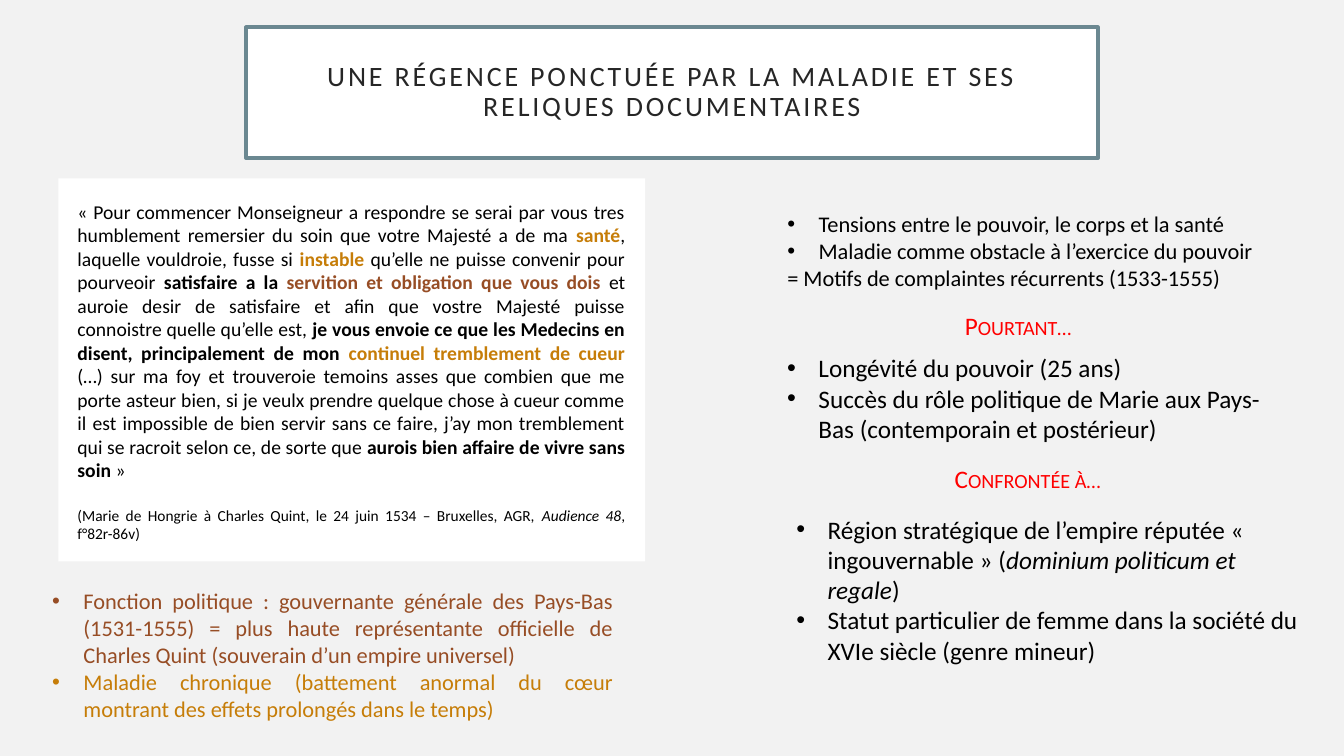
from dataclasses import dataclass

from lxml import etree
from pptx import Presentation
from pptx import util as u
from pptx.dml.color import RGBColor
from pptx.enum import shapes, text
from pptx.oxml.ns import qn

PX = 9144  # EMU per px, 100 px to the inch
HANG = 31  # bullet indent in px


@dataclass(frozen=True)
class Theme:
    font: str = "Calibri"
    back: str = "F2F2F2"
    white: str = "FFFFFF"
    frame: str = "6B8891"
    title: str = "262626"
    black: str = "000000"
    gold: str = "C67D08"
    rust: str = "974D25"
    red: str = "FF0000"
    note: int = 11
    quote: int = 14
    small: int = 16
    large: int = 18
    head: int = 20


T = Theme()
LEFT, CENTER, FULL = text.PP_ALIGN.LEFT, text.PP_ALIGN.CENTER, text.PP_ALIGN.JUSTIFY


@dataclass(frozen=True)
class Box:
    left: int
    top: int
    width: int
    height: int

    def emu(self) -> list[int]:
        return [n * PX for n in (self.left, self.top, self.width, self.height)]


@dataclass(frozen=True)
class Run:
    text: str
    ink: str = T.black
    bold: bool = False
    italic: bool = False


@dataclass(frozen=True)
class Para:
    runs: list[Run]
    size: int
    align: text.PP_ALIGN = LEFT
    bullet: bool = False
    before: int = 0
    lines: float = 1.0


@dataclass(frozen=True)
class Block:
    box: Box
    paras: list[Para]
    caps: bool = False


def assign(obj: object, values: dict) -> None:
    for name, value in values.items():
        setattr(obj, name, value)


def add_para(frame, para: Para, first: bool, extra: dict[str, str]) -> None:
    """Add a paragraph; extra holds raw run attributes such as cap or spc."""
    p = frame.paragraphs[0] if first else frame.add_paragraph()
    assign(p, dict(alignment=para.align, line_spacing=para.lines,
                   space_before=u.Pt(para.before)))
    if para.bullet:
        props = p._p.get_or_add_pPr()
        props.set("marL", str(HANG * PX))
        props.set("indent", str(-HANG * PX))
        etree.SubElement(props, qn("a:buFont")).set("typeface", "Arial")
        etree.SubElement(props, qn("a:buChar")).set("char", "•")
    for item in para.runs:
        run = p.add_run()
        run.text = item.text
        assign(run.font, dict(name=T.font, size=u.Pt(para.size),
                              bold=item.bold, italic=item.italic))
        run.font.color.rgb = RGBColor.from_string(item.ink)
        for key, value in extra.items():
            run._r.get_or_add_rPr().set(key, value)


def add_block(slide, block: Block) -> None:
    frame = slide.shapes.add_textbox(*block.box.emu()).text_frame
    assign(frame, dict(word_wrap=True, auto_size=text.MSO_AUTO_SIZE.SHAPE_TO_FIT_TEXT))
    extra = {"cap": "small"} if block.caps else {}
    for i, para in enumerate(block.paras):
        add_para(frame, para, i == 0, extra)


def add_panel(slide, box: Box):
    panel = slide.shapes.add_shape(shapes.MSO_SHAPE.RECTANGLE, *box.emu())
    panel.shadow.inherit = False
    panel.fill.solid()
    panel.fill.fore_color.rgb = RGBColor.from_string(T.white)
    panel.line.fill.background()
    return panel


def add_title(slide, box: Box, words: str) -> None:
    panel = add_panel(slide, box)
    panel.line.color.rgb = RGBColor.from_string(T.frame)
    panel.line.width = u.Pt(2.5)
    frame = panel.text_frame
    sides = ("left", "top", "right", "bottom")
    assign(frame, {f"margin_{side}": 20 * PX for side in sides})
    assign(frame, dict(word_wrap=True, vertical_anchor=text.MSO_ANCHOR.MIDDLE))
    para = Para([Run(words, T.title)], T.head, CENTER, lines=0.9)
    add_para(frame, para, True, {"spc": "200"})


def point(words: str, size: int, ink: str = T.black, align: text.PP_ALIGN = LEFT) -> Para:
    return Para([Run(words, ink)], size, align, bullet=True)


def label(box: Box, words: str) -> Block:
    return Block(box, [Para([Run(words, T.red)], T.large)], caps=True)


TITLE = "UNE RÉGENCE PONCTUÉE PAR LA MALADIE ET SES RELIQUES DOCUMENTAIRES"

QUOTE = [
    Run("« Pour commencer Monseigneur a respondre se serai par vous tres humblement "
        "remersier du soin que votre Majesté a de ma "),
    Run("santé", T.gold, bold=True),
    Run(", laquelle vouldroie, fusse si "),
    Run("instable", T.gold, bold=True),
    Run(" qu’elle ne puisse convenir pour pourveoir "),
    Run("satisfaire a la ", bold=True),
    Run("servition et obligation que vous dois ", T.rust, bold=True),
    Run("et auroie desir de satisfaire et afin que vostre Majesté puisse connoistre "
        "quelle qu’elle est, "),
    Run("je vous envoie ce que les Medecins en disent, principalement de mon ", bold=True),
    Run("continuel tremblement de cueur ", T.gold, bold=True),
    Run("(…) sur ma foy et trouveroie temoins asses que combien que me porte asteur "
        "bien, si je veulx prendre quelque chose à cueur comme il est impossible de "
        "bien servir sans ce faire, j’ay mon tremblement qui se racroit selon ce, "
        "de sorte que "),
    Run("aurois bien affaire de vivre sans soin ", bold=True),
    Run("»"),
]

CITE = [
    Run("(Marie de Hongrie à Charles Quint, le 24 juin 1534 – Bruxelles, AGR, "),
    Run("Audience 48", italic=True),
    Run(", f°82r-86v)"),
]

REGION = [
    Run("Région stratégique de l’empire réputée « ingouvernable » ("),
    Run("dominium politicum et regale", italic=True),
    Run(")"),
]

BLOCKS = [
    Block(Box(67, 193, 563, 387), [
        Para(QUOTE, T.quote, FULL),
        Para(CITE, T.note, FULL, before=17),
    ]),
    Block(Box(771, 204, 525, 91), [
        point("Tensions entre le pouvoir, le corps et la santé", T.small),
        point("Maladie comme obstacle à l’exercice du pouvoir", T.small),
        Para([Run("= Motifs de complaintes récurrents (1533-1555)")], T.small),
    ]),
    Block(Box(42, 578, 576, 145), [
        point("Fonction politique : gouvernante générale des Pays-Bas (1531-1555) = plus "
              "haute représentante officielle de Charles Quint (souverain d’un empire "
              "universel)", T.small, T.rust, FULL),
        point("Maladie chronique (battement anormal du cœur montrant des effets "
              "prolongés dans le temps)", T.small, T.gold, FULL),
    ]),
    label(Box(947, 303, 191, 40), "Pourtant…"),
    Block(Box(771, 345, 496, 101), [
        point("Longévité du pouvoir (25 ans)", T.large),
        point("Succès du rôle politique de Marie aux Pays-Bas (contemporain et "
              "postérieur)", T.large),
    ]),
    label(Box(937, 455, 233, 40), "Confrontée à…"),
    Block(Box(780, 505, 525, 162), [
        Para(REGION, T.large, bullet=True),
        point("Statut particulier de femme dans la société du XVIe siècle (genre "
              "mineur)", T.large),
    ]),
]


def main() -> None:
    deck = Presentation()
    assign(deck, dict(slide_width=1333 * PX, slide_height=750 * PX))
    slide = deck.slides.add_slide(deck.slide_layouts[6])
    slide.background.fill.solid()
    slide.background.fill.fore_color.rgb = RGBColor.from_string(T.back)
    add_panel(slide, Box(58, 177, 582, 380))
    add_title(slide, Box(244, 27, 845, 130), TITLE)
    for block in BLOCKS:
        add_block(slide, block)
    deck.save("out.pptx")


if __name__ == "__main__":
    main()
